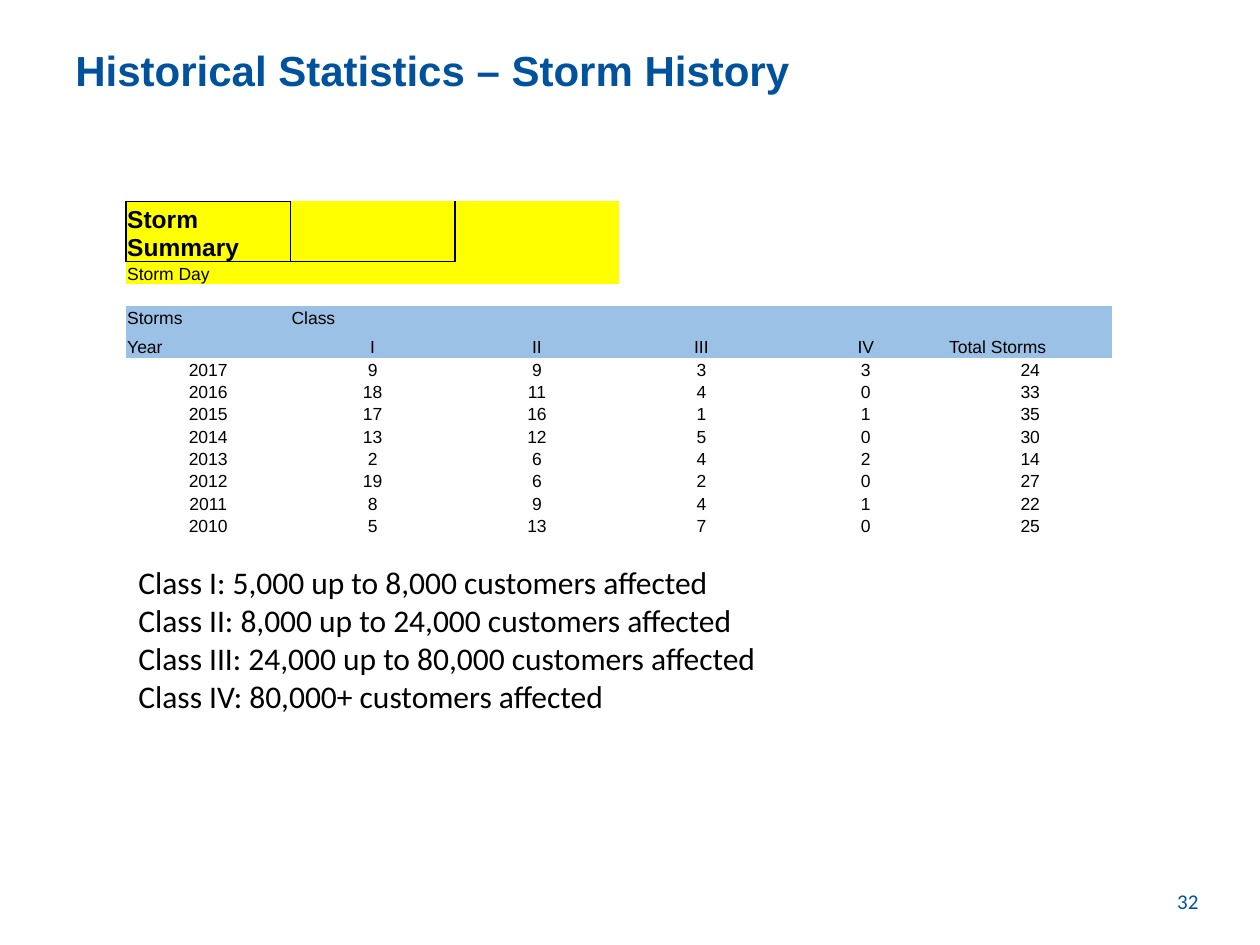
from lxml.etree import SubElement
from pptx import Presentation
from pptx.dml.color import RGBColor
from pptx.enum.text import MSO_ANCHOR, PP_ALIGN
from pptx.oxml import parse_xml
from pptx.oxml.ns import nsdecls, qn
from pptx.util import Inches, Pt

BLUE = RGBColor(0x00, 0x52, 0x9C)
BLACK = RGBColor(0x00, 0x00, 0x00)
YELLOW = RGBColor(0xFF, 0xFF, 0x00)
LIGHT_BLUE = RGBColor(0x9B, 0xC2, 0xE6)
PLAIN_TABLE_STYLE = "{2D5ABB26-0587-4C30-8999-92F81FD0307C}"
GRID_COLUMNS, GRID_ROWS = 100, 75

CLASS_NOTES = [
    "Class I: 5,000 up to 8,000 customers affected",
    "Class II: 8,000 up to 24,000 customers affected",
    "Class III: 24,000 up to 80,000 customers affected",
    "Class IV: 80,000+ customers affected",
]
STORMS = [
    (2017, 9, 9, 3, 3, 24),
    (2016, 18, 11, 4, 0, 33),
    (2015, 17, 16, 1, 1, 35),
    (2014, 13, 12, 5, 0, 30),
    (2013, 2, 6, 4, 2, 14),
    (2012, 19, 6, 2, 0, 27),
    (2011, 8, 9, 4, 1, 22),
    (2010, 5, 13, 7, 0, 25),
]
HEADINGS = ["Year", "I", "II", "III", "IV", "Total Storms"]
TABLE_ROWS = [[], ["Storm Summary"], ["Storm Day"], [], ["Storms", "Class"], HEADINGS, *STORMS]
TABLE_COLUMNS = len(HEADINGS)
FIRST_YEAR_ROW = len(TABLE_ROWS) - len(STORMS)
TALL_ROWS = {1: 4.8, 5: 2.3}
ROW_FILLS = {1: (YELLOW, 3), 2: (YELLOW, 3), 4: (LIGHT_BLUE, 6), 5: (LIGHT_BLUE, 6)}
CELL_BORDERS = {(0, 0): "B", (1, 0): "LRT", (1, 1): "L"}


class SlideBuilder:
    """Hold the current slide and draw its elements on a grid."""

    def __init__(self, presentation):
        self.presentation = presentation
        self.slide = presentation.slides.add_slide(presentation.slide_layouts[6])

    def place(self, left, top, width, height):
        column = self.presentation.slide_width / GRID_COLUMNS
        row = self.presentation.slide_height / GRID_ROWS
        return [int(left * column), int(top * row), int(width * column), int(height * row)]

    def run(self, paragraph, text, font, size, color, bold=False):
        run = paragraph.add_run()
        run.text = text
        run.font.name = font
        run.font.size = Pt(size)
        run.font.color.rgb = color
        run.font.bold = bold

    def text(self, area, lines, font, size, color, bold=False,
             align=PP_ALIGN.LEFT, anchor=MSO_ANCHOR.TOP):
        frame = self.slide.shapes.add_textbox(*self.place(*area)).text_frame
        frame.word_wrap = True
        frame.vertical_anchor = anchor
        for index, line in enumerate(lines):
            paragraph = frame.add_paragraph() if index else frame.paragraphs[0]
            paragraph.alignment = align
            self.run(paragraph, line, font, size, color, bold)

    def cell(self, cell, text, size=10, bold=False, align=PP_ALIGN.LEFT, fill=None, borders=""):
        cell.margin_left = cell.margin_right = cell.margin_top = Inches(0.01)
        cell.margin_bottom = 0
        cell.vertical_anchor = MSO_ANCHOR.BOTTOM
        if fill is None:
            cell.fill.background()
        else:
            cell.fill.solid()
            cell.fill.fore_color.rgb = fill
        paragraph = cell.text_frame.paragraphs[0]
        paragraph.alignment = align
        if text:
            self.run(paragraph, text, "Arial", size, BLACK, bold)
        else:
            SubElement(paragraph._p, qn("a:endParaRPr"), sz=str(size * 100))
        properties = cell._tc.get_or_add_tcPr()
        for index, side in enumerate(borders):
            properties.insert(index, parse_xml(
                f'<a:ln{side} {nsdecls("a")} w="12700"><a:solidFill>'
                f'<a:srgbClr val="{BLACK}"/></a:solidFill></a:ln{side}>'))

    def storm_table(self, area):
        left, top, width, height = area
        frame = self.slide.shapes.add_table(len(TABLE_ROWS), TABLE_COLUMNS, *self.place(*area))
        table = frame.table
        table.first_row = table.horz_banding = False
        table._tbl.tblPr.find(qn("a:tableStyleId")).text = PLAIN_TABLE_STYLE
        short_row = (height - sum(TALL_ROWS.values())) / (len(TABLE_ROWS) - len(TALL_ROWS))
        for row, values in enumerate(TABLE_ROWS):
            row_height = TALL_ROWS.get(row, short_row)
            table.rows[row].height = self.place(0, 0, width, row_height)[3]
            fill, filled = ROW_FILLS.get(row, (None, 0))
            for column in range(TABLE_COLUMNS):
                text = str(values[column]) if column < len(values) else ""
                centered = row >= FIRST_YEAR_ROW or text in HEADINGS[1:-1]
                summary = text == "Storm Summary"
                self.cell(
                    table.cell(row, column), text,
                    size=14 if summary else 10,
                    bold=summary,
                    align=PP_ALIGN.CENTER if centered else PP_ALIGN.LEFT,
                    fill=fill if column < filled else None,
                    borders=CELL_BORDERS.get((row, column), ""))
        table.cell(2, 0).merge(table.cell(2, 1))


def main():
    presentation = Presentation()
    presentation.slide_width = Inches(10)
    presentation.slide_height = Inches(7.5)
    builder = SlideBuilder(presentation)
    builder.text((5, 3, 90, 12.5), ["Historical Statistics – Storm History"],
                 "Arial", 24, BLUE, bold=True)
    builder.text((72.8, 69.5, 23.3, 4), ["32"], "Calibri", 12, BLUE,
                 align=PP_ALIGN.RIGHT, anchor=MSO_ANCHOR.MIDDLE)
    builder.text((10, 44.2, 60.8, 13.1), CLASS_NOTES, "Calibri", 18, BLACK)
    builder.storm_table((10, 14.2, 78.3, 28.3))
    presentation.save("out.pptx")


if __name__ == "__main__":
    main()
